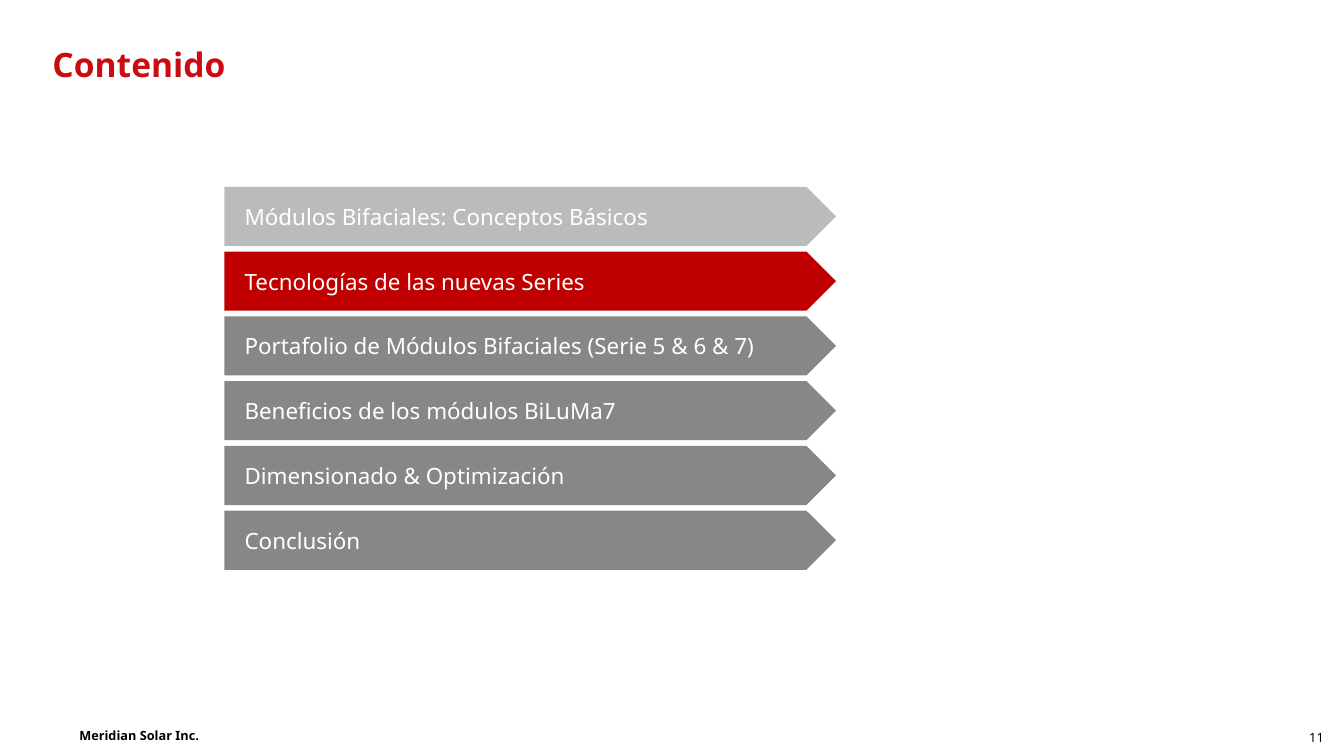
"""Build the agenda slide with the current section highlighted."""
from pptx import Presentation
from pptx.dml.color import RGBColor
from pptx.enum.shapes import MSO_SHAPE as SHAPE
from pptx.enum.text import MSO_ANCHOR as ANCHOR, PP_ALIGN as ALIGN
from pptx.util import Inches, Pt

FONT = "Noto Sans"
TITLE_RED = RGBColor(0xCA, 0x0B, 0x0F)
ACTIVE_RED = RGBColor(0xC0, 0x00, 0x00)
DONE_GRAY = RGBColor(0xBA, 0xBC, 0xBB)
NEXT_GRAY = RGBColor(0x86, 0x88, 0x87)
WHITE = RGBColor(0xFF, 0xFF, 0xFF)
BLACK = RGBColor(0x00, 0x00, 0x00)

LEFT, TOP, BOTTOM, WIDTH, HEIGHT = 1.67, 1.39, 4.24, 4.55, 0.44
SECTIONS = [
    ("Módulos Bifaciales: Conceptos Básicos", DONE_GRAY),
    ("Tecnologías de las nuevas Series", ACTIVE_RED),
    ("Portafolio de Módulos Bifaciales (Serie 5 & 6 & 7)", NEXT_GRAY),
    ("Beneficios de los módulos BiLuMa7", NEXT_GRAY),
    ("Dimensionado & Optimización", NEXT_GRAY),
    ("Conclusión", NEXT_GRAY),
]
PITCH = (BOTTOM - TOP - HEIGHT) / (len(SECTIONS) - 1)
FOOTERS = [
    ("11", 9.57, 0.28, 0.21, ALIGN.RIGHT, False),
    ("Meridian Solar Inc.", 0.59, 1.34, 0.19, ALIGN.LEFT, True),
]


def set_text(sp, text, size, color, bold=False, align=ALIGN.LEFT,
             anchor=ANCHOR.MIDDLE, inset=0, wrap=True):
    tf = sp.text_frame
    tf.text = text
    tf.word_wrap = wrap
    tf.vertical_anchor = anchor
    tf.margin_left = tf.margin_right = Inches(inset)
    tf.margin_top = tf.margin_bottom = 0
    p = tf.paragraphs[0]
    p.alignment = align
    font = p.runs[0].font
    font.name, font.size, font.bold = FONT, Pt(size), bold
    font.color.rgb = color


prs = Presentation()
prs.slide_width = Inches(10)
prs.slide_height = prs.slide_width * 9 // 16
s = prs.slides.add_slide(prs.slide_layouts[5])

title = s.shapes.title
title.left, title.top = Inches(0.39), Inches(0.33)
title.width, title.height = Inches(6.52), Inches(0.71)
set_text(title, "Contenido", 18, TITLE_RED, bold=True, anchor=ANCHOR.TOP)

for row, (text, color) in enumerate(SECTIONS):
    sp = s.shapes.add_shape(SHAPE.PENTAGON, Inches(LEFT), Inches(TOP + row * PITCH),
                            Inches(WIDTH), Inches(HEIGHT))
    sp.shadow.inherit = False
    sp.fill.solid()
    sp.fill.fore_color.rgb = color
    sp.line.fill.background()
    set_text(sp, text, 12, WHITE, inset=0.15)

for text, left, width, height, align, bold in FOOTERS:
    sp = s.shapes.add_textbox(Inches(left), Inches(5.38), Inches(width), Inches(height))
    set_text(sp, text, 6.8, BLACK, bold=bold, align=align, wrap=False)

prs.save("out.pptx")
